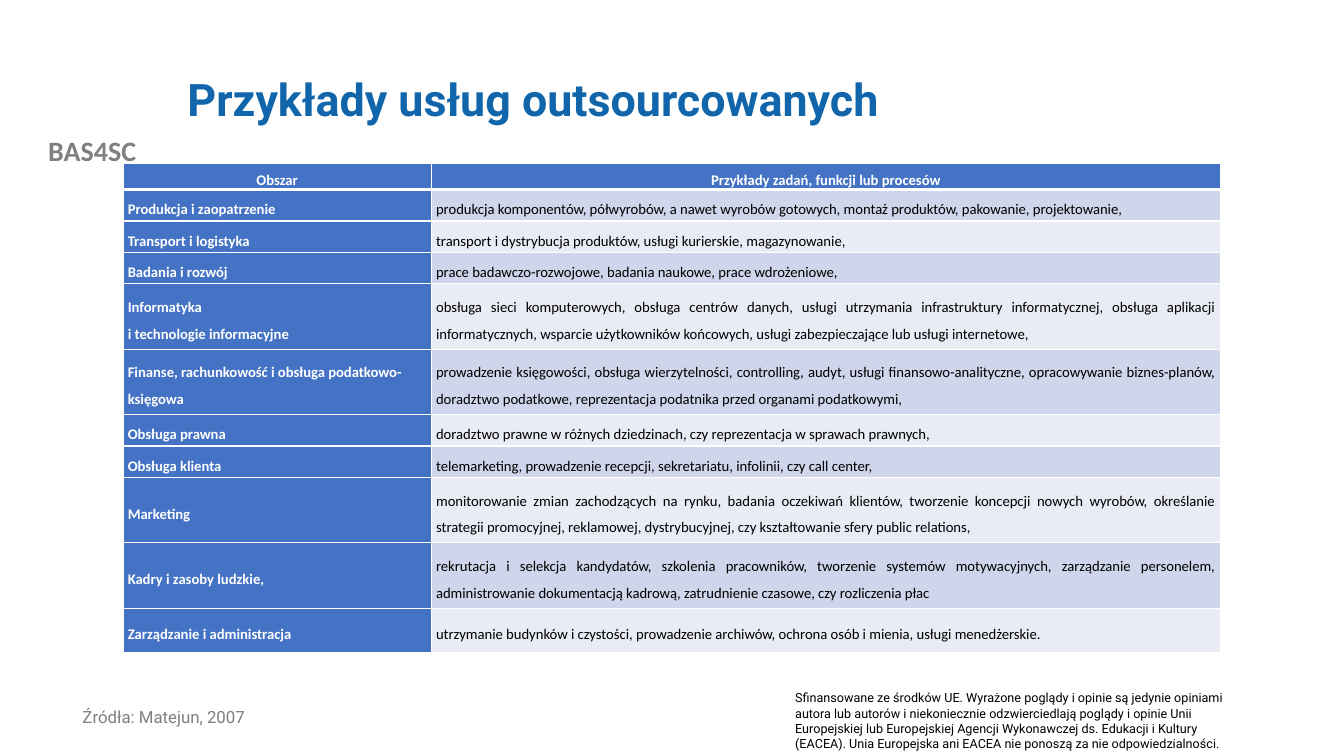
from pptx import Presentation
from pptx import util as u
from pptx.dml.color import RGBColor
from pptx.enum import text
from pptx.oxml import parse_xml
from pptx.oxml.ns import nsdecls

COLORS = {
    "title": "1065AB", "project": "808080", "source": "7F7F7F",
    "label": "4472C4", "band_dark": "CFD5EA", "band_light": "E9EBF5",
    "white": "FFFFFF", "black": "000000",
}
ALIGN = text.PP_ALIGN
SHORT, TALL = 0.79, 1.65

HEADER = ("Obszar", "Przykłady zadań, funkcji lub procesów")
# area, examples, row height in cm
AREAS = [
    ("Produkcja i zaopatrzenie",
     "produkcja komponentów, półwyrobów, a nawet wyrobów gotowych, montaż produktów, "
     "pakowanie, projektowanie,", SHORT),
    ("Transport i logistyka",
     "transport i dystrybucja produktów, usługi kurierskie, magazynowanie,", SHORT),
    ("Badania i rozwój",
     "prace badawczo-rozwojowe, badania naukowe, prace wdrożeniowe,", SHORT),
    ("Informatyka\vi technologie informacyjne",
     "obsługa sieci komputerowych, obsługa centrów danych, usługi utrzymania infrastruktury "
     "informatycznej, obsługa aplikacji informatycznych, wsparcie użytkowników końcowych, "
     "usługi zabezpieczające lub usługi internetowe,", TALL),
    ("Finanse, rachunkowość i obsługa podatkowo-księgowa",
     "prowadzenie księgowości, obsługa wierzytelności, controlling, audyt, usługi "
     "finansowo-analityczne, opracowywanie biznes-planów, doradztwo podatkowe, "
     "reprezentacja podatnika przed organami podatkowymi,", TALL),
    ("Obsługa prawna",
     "doradztwo prawne w różnych dziedzinach, czy reprezentacja w sprawach prawnych,", SHORT),
    ("Obsługa klienta",
     "telemarketing, prowadzenie recepcji, sekretariatu, infolinii, czy call center,", SHORT),
    ("Marketing",
     "monitorowanie zmian zachodzących na rynku, badania oczekiwań klientów, tworzenie "
     "koncepcji nowych wyrobów, określanie strategii promocyjnej, reklamowej, "
     "dystrybucyjnej, czy kształtowanie sfery public relations,", TALL),
    ("Kadry i zasoby ludzkie,",
     "rekrutacja i selekcja kandydatów, szkolenia pracowników, tworzenie systemów "
     "motywacyjnych, zarządzanie personelem, administrowanie dokumentacją kadrową, "
     "zatrudnienie czasowe, czy rozliczenia płac", TALL),
    ("Zarządzanie i administracja",
     "utrzymanie budynków i czystości, prowadzenie archiwów, ochrona osób i mienia, "
     "usługi menedżerskie.", 1.12),
]
DISCLAIMER = (
    "Sfinansowane ze środków UE. Wyrażone poglądy i opinie są jedynie opiniami autora lub "
    "autorów i niekoniecznie odzwierciedlają poglądy i opinie Unii Europejskiej lub "
    "Europejskiej Agencji Wykonawczej ds. Edukacji i Kultury (EACEA). Unia Europejska ani "
    "EACEA nie ponoszą za nie odpowiedzialności."
)


def format_text(tf, size, color, font="Roboto", bold=False, align=ALIGN.LEFT,
                spacing=None, after=None):
    for p in tf.paragraphs:
        p.alignment = align
        p.line_spacing = spacing
        if after is not None:
            p.space_after = u.Pt(after)
        for r in p.runs:
            r.font.name, r.font.size, r.font.bold = font, u.Pt(size), bold
            r.font.color.rgb = RGBColor.from_string(COLORS[color])


def add_title(s, box, words):
    sp = s.shapes.title
    sp.left, sp.top, sp.width, sp.height = (u.Cm(v) for v in box)
    tf = sp.text_frame
    tf.text = words
    tf.auto_size = text.MSO_AUTO_SIZE.NONE
    tf.vertical_anchor = text.MSO_ANCHOR.MIDDLE
    format_text(tf, 32, "title", bold=True, spacing=0.9)


def add_note(s, box, words, size, color, **style):
    tf = s.shapes.add_textbox(*(u.Cm(v) for v in box)).text_frame
    tf.word_wrap = True
    tf.text = words
    format_text(tf, size, color, **style)


def add_borders(cell, bottom):
    for side in "LRTB":
        width = u.Pt(bottom if side == "B" else 1)
        cell._tc.get_or_add_tcPr().append(parse_xml(
            f'<a:ln{side} {nsdecls("a")} w="{width}"><a:solidFill>'
            f'<a:srgbClr val="{COLORS["white"]}"/></a:solidFill></a:ln{side}>'))


def fill_cell(cell, words, fill, color, bold, align, bottom=1):
    cell.margin_left = cell.margin_right = u.Cm(0.12)
    cell.margin_top = cell.margin_bottom = 0
    cell.vertical_anchor = text.MSO_ANCHOR.MIDDLE
    add_borders(cell, bottom)
    cell.fill.solid()
    cell.fill.fore_color.rgb = RGBColor.from_string(COLORS[fill])
    cell.text_frame.text = words
    format_text(cell.text_frame, 10.5, color, "Calibri", bold, align, 1.5, 6)


def add_areas_table(s, box):
    table = s.shapes.add_table(len(AREAS) + 1, 2, *(u.Cm(v) for v in box)).table
    area_width = 7.77
    table.columns[0].width = u.Cm(area_width)
    table.columns[1].width = u.Cm(box[2] - area_width)
    table.rows[0].height = u.Cm(0.38)
    for col, words in enumerate(HEADER):
        fill_cell(table.cell(0, col), words, "label", "white", True, ALIGN.CENTER, 3)
    for row, (area, examples, height) in enumerate(AREAS, 1):
        table.rows[row].height = u.Cm(height)
        band = "band_dark" if row % 2 else "band_light"
        fill_cell(table.cell(row, 0), area, "label", "white", True, ALIGN.LEFT)
        fill_cell(table.cell(row, 1), examples, band, "black", False, ALIGN.JUSTIFY)


def main():
    prs = Presentation()
    prs.slide_width, prs.slide_height = u.Cm(33.87), u.Cm(19.05)
    s = prs.slides.add_slide(prs.slide_layouts[5])
    add_note(s, (0, 3.25, 4.65, 1.12), "BAS4SC", 20, "project",
             font="Calibri", bold=True, align=ALIGN.CENTER)
    add_note(s, (19.79, 17.27, 11.76, 1.8), DISCLAIMER, 9, "black")
    add_title(s, (4.47, 1.02, 27.08, 3.1), "Przykłady usług outsourcowanych")
    add_note(s, (1.83, 17.73, 12.73, 1.32), "Źródła: Matejun, 2007", 12, "source", spacing=0.9)
    add_areas_table(s, (3.1, 4.11, 27.66, 12.32))
    prs.save("out.pptx")


if __name__ == "__main__":
    main()
